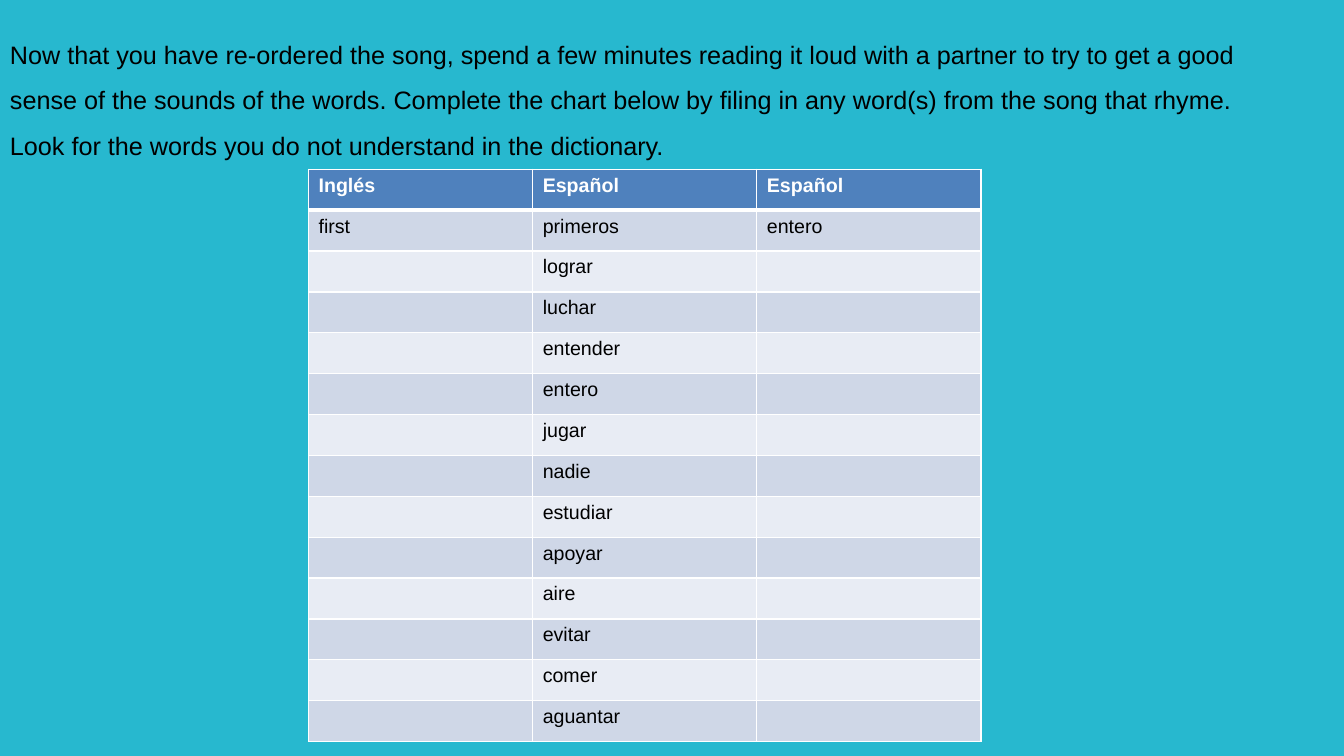
from lxml.etree import SubElement
from pptx import Presentation
from pptx.dml.color import RGBColor
from pptx.enum.text import MSO_AUTO_SIZE as AutoSize
from pptx.oxml.ns import qn
from pptx.util import Inches, Pt

INSTRUCTIONS = (
    "Now that you have re-ordered the song, spend a few minutes reading it loud "
    "with a partner to try to get a good sense of the sounds of the words. "
    "Complete the chart below by filing in any word(s) from the song that rhyme. "
    "Look for the words you do not understand in the dictionary."
)
HEADINGS = ("Inglés", "Español", "Español")
EXAMPLE = ("first", "primeros", "entero")
SONG_WORDS = ("lograr", "luchar", "entender", "entero", "jugar", "nadie",
              "estudiar", "apoyar", "aire", "evitar", "comer", "aguantar")
RHYMES = [HEADINGS, EXAMPLE] + [("", word, "") for word in SONG_WORDS]

BACKGROUND, HEADER = "27B8CF", "4F81BD"
BANDS = ("E8ECF4", "CFD7E7")
WHITE, BLACK = "FFFFFF", "000000"


def color(value):
    return RGBColor.from_string(value)


def write_text(frame, text, size=14, ink=BLACK, bold=False, spacing=None):
    paragraph = frame.paragraphs[0]
    paragraph.line_spacing = spacing
    run = paragraph.add_run()
    run.text = text
    run.font.name = "Arial"
    run.font.size = Pt(size)
    run.font.bold = bold
    run.font.color.rgb = color(ink)


def add_border(properties, side, width):
    line = SubElement(properties, qn(f"a:ln{side}"), w=str(Pt(width)))
    SubElement(SubElement(line, qn("a:solidFill")), qn("a:srgbClr"), val=WHITE)


def format_cell(cell, fill, bottom=1, top=1):
    properties = cell._tc.get_or_add_tcPr()
    # Borders come before the fill in the cell properties
    for side, width in (("L", 1), ("R", 1), ("T", top), ("B", bottom)):
        add_border(properties, side, width)
    cell.fill.solid()
    cell.fill.fore_color.rgb = color(fill)


def add_instructions(slide, left, top, width, height):
    frame = slide.shapes.add_textbox(left, top, width, height).text_frame
    frame.word_wrap = True
    frame.auto_size = AutoSize.SHAPE_TO_FIT_TEXT
    write_text(frame, INSTRUCTIONS, size=18, spacing=1.5)


def add_rhyme_table(slide, left, top, width, height):
    table = slide.shapes.add_table(
        len(RHYMES), len(HEADINGS), left, top, width, height).table
    for row, words in enumerate(RHYMES):
        is_header = row == 0
        for column, word in enumerate(words):
            cell = table.cell(row, column)
            format_cell(cell, HEADER if is_header else BANDS[row % 2],
                        bottom=3 if is_header else 1,
                        top=3 if row == 1 else 1)
            if word:
                write_text(cell.text_frame, word, bold=is_header,
                           ink=WHITE if is_header else BLACK)


def main():
    deck = Presentation()
    deck.slide_width, deck.slide_height = Inches(13.33), Inches(7.5)
    slide = deck.slides.add_slide(deck.slide_layouts[6])
    slide.background.fill.solid()
    slide.background.fill.fore_color.rgb = color(BACKGROUND)

    # Task for the pupils, with the chart to fill in below it
    add_instructions(slide, Inches(0), Inches(0.19), Inches(12.45), Inches(1.46))
    add_rhyme_table(slide, Inches(3.06), Inches(1.68), Inches(6.67), Inches(5.68))
    deck.save("out.pptx")


if __name__ == "__main__":
    main()
